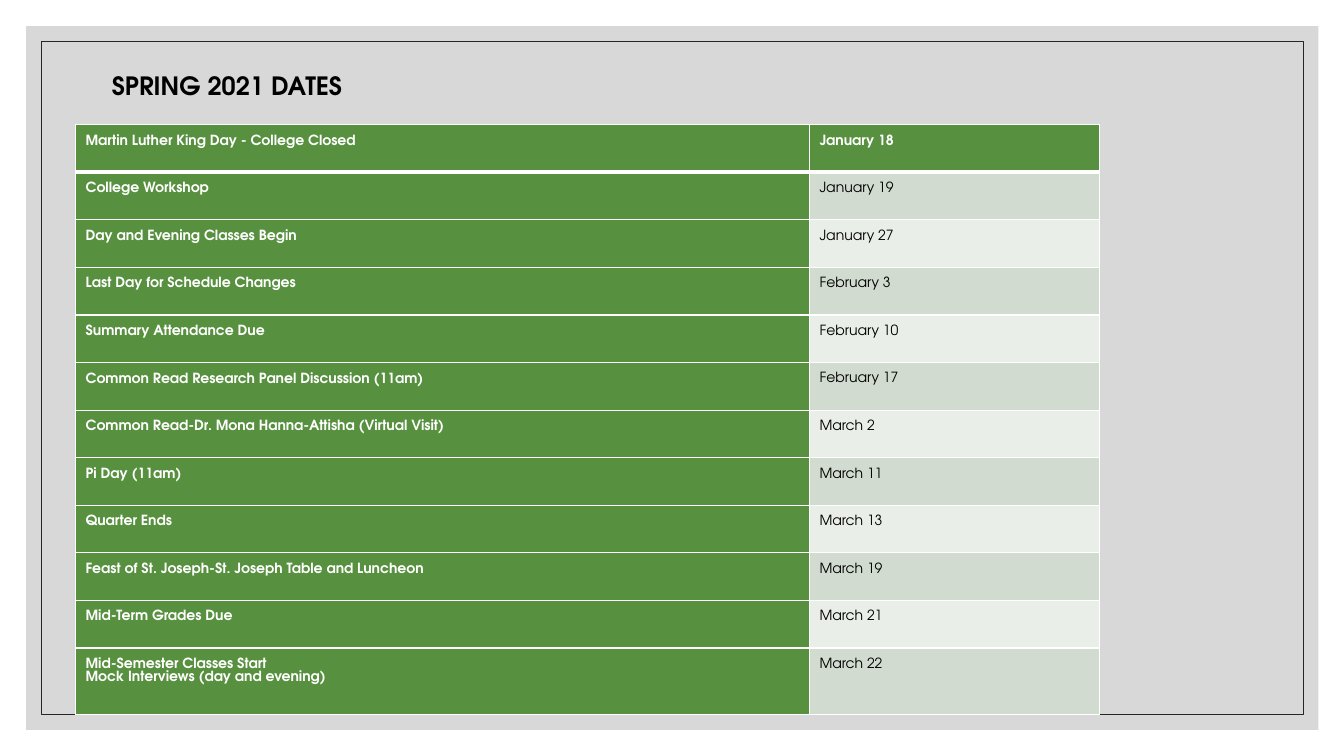
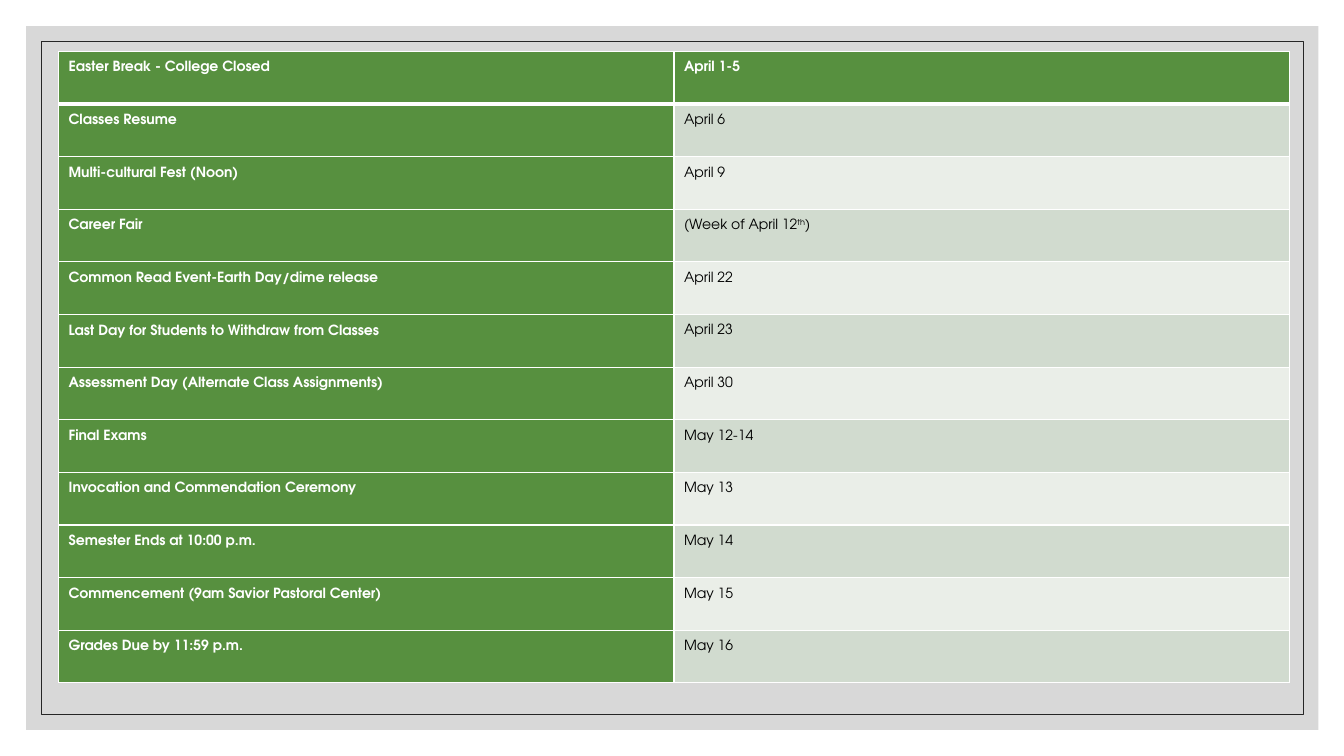
"""Build the two slides of spring semester dates."""
import pptx
import pptx.dml.color
import pptx.enum.shapes
import pptx.enum.text
import pptx.oxml.ns
import pptx.util
from lxml import etree

Pt = pptx.util.Pt
FONT = "TeX Gyre Adventor"
BLACK, WHITE, GREEN = "000000", "FFFFFF", "57903F"
PANEL, FRAME = "BFBFBF", "262626"
BANDS = ("D1DBCF", "EAEEE8")

EARLY_DATES = [
    ("Martin Luther King Day - College Closed", "January 18"),
    ("College Workshop", "January 19"),
    ("Day and Evening Classes Begin", "January 27"),
    ("Last Day for Schedule Changes", "February 3"),
    ("Summary Attendance Due", "February 10"),
    ("Common Read Research Panel Discussion (11am)", "February 17"),
    ("Common Read-Dr. Mona Hanna-Attisha (Virtual Visit)", "March 2"),
    ("Pi Day (11am)", "March 11"),
    ("Quarter Ends", "March 13"),
    ("Feast of St. Joseph-St. Joseph Table and Luncheon", "March 19"),
    ("Mid-Term Grades Due", "March 21"),
    ("Mid-Semester Classes Start\nMock Interviews (day and evening)", "March 22"),
]
LATE_DATES = [
    ("Easter Break - College Closed", "April 1-5"),
    ("Classes Resume", "April 6"),
    ("Multi-cultural Fest (Noon)", "April 9"),
    ("Career Fair", "(Week of April 12^th^)"),
    ("Common Read Event-Earth Day/dime release", "April 22"),
    ("Last Day for Students to Withdraw from Classes", "April 23"),
    ("Assessment Day (Alternate Class Assignments)", "April 30"),
    ("Final Exams", "May 12-14"),
    ("Invocation and Commendation Ceremony", "May 13"),
    ("Semester Ends at 10:00 p.m.", "May 14"),
    ("Commencement (9am Savior Pastoral Center)", "May 15"),
    ("Grades Due by 11:59 p.m.", "May 16"),
]


def paint(target, color):
    """Give a fill or a line fill a solid colour."""
    target.solid()
    target.fore_color.rgb = pptx.dml.color.RGBColor.from_string(color)


def add_child(parent, tag, **attributes):
    """Append a drawing element with the given attributes."""
    return etree.SubElement(parent, pptx.oxml.ns.qn(tag), attributes)


def write(frame, text, size=10, color=BLACK, bold=False, spacing=None):
    """Write lines of text, raising whatever stands between carets."""
    frame.word_wrap = True
    for index, line in enumerate(text.split("\n")):
        para = frame.add_paragraph() if index else frame.paragraphs[0]
        para.alignment = pptx.enum.text.PP_ALIGN.LEFT
        para.line_spacing = spacing
        for position, part in enumerate(line.split("^")):
            span = para.add_run()
            span.text = part
            span.font.name = FONT
            span.font.size = Pt(size)
            span.font.bold = bold
            paint(span.font.fill, color)
            if position % 2:
                span.font._element.set("baseline", "30000")


def add_rectangle(page, left, top, width, height):
    """Add a rectangle without fill, line or shadow."""
    box = page.shapes.add_shape(pptx.enum.shapes.MSO_SHAPE.RECTANGLE,
                                Pt(left), Pt(top), Pt(width), Pt(height))
    box.shadow.inherit = False
    box.fill.background()
    box.line.fill.background()
    return box


def add_backdrop(deck, page):
    """Draw the grey panel and thin frame and place them on the master."""
    panel = add_rectangle(page, 18.7, 18.7, 923, 502.6)
    paint(panel.fill, PANEL)
    tint = panel.fill._xPr.find(".//" + pptx.oxml.ns.qn("a:srgbClr"))
    add_child(tint, "a:alpha", val="60000")
    border = add_rectangle(page, 29.5, 29.5, 901.4, 481)
    paint(border.line.fill, FRAME)
    border.line.width = Pt(0.5)
    for number, box in enumerate((panel, border), 101):
        box._element.nvSpPr.cNvPr.set("id", str(number))
        deck.slide_master.shapes._spTree.append(box._element)


def add_title(page, text):
    """Place and write the page title."""
    title = page.shapes.title
    title.left, title.top, title.width, title.height = map(Pt, (72.7, 46.8, 216, 28.8))
    title.text_frame.auto_size = pptx.enum.text.MSO_AUTO_SIZE.NONE
    title.text_frame.vertical_anchor = pptx.enum.text.MSO_ANCHOR.MIDDLE
    write(title.text_frame, text, size=18, bold=True)


def set_borders(cell, **widths):
    """Draw white cell borders, one point wide unless stated."""
    properties = cell._tc.get_or_add_tcPr()
    for side in "LRTB":
        line = add_child(properties, "a:ln" + side, w=str(Pt(widths.get(side, 1))))
        add_child(add_child(line, "a:solidFill"), "a:srgbClr", val=WHITE)


def add_dates(page, dates, left, top, columns, heights):
    """Add a table of events and dates with a green header and first column."""
    table = page.shapes.add_table(len(dates), len(columns), Pt(left), Pt(top),
                                  Pt(sum(columns)), Pt(sum(heights))).table
    table.first_col = True
    for column, width in zip(table.columns, columns):
        column.width = Pt(width)
    for row, (entry, height) in enumerate(zip(dates, heights)):
        table.rows[row].height = Pt(height)
        for column, text in enumerate(entry):
            cell = table.cell(row, column)
            heading = row == 0 or column == 0
            cell.margin_left = cell.margin_right = Pt(7.2)
            cell.margin_top = cell.margin_bottom = Pt(7.2)
            set_borders(cell, T=3 if row == 1 else 1, B=1 if row else 3)
            paint(cell.fill, GREEN if heading else BANDS[(row - 1) % 2])
            write(cell.text_frame, text, color=WHITE if heading else BLACK,
                  bold=heading, spacing=Pt(9.3))


def main():
    """Build and save the deck."""
    deck = pptx.Presentation()
    deck.slide_width, deck.slide_height = Pt(960), Pt(540)
    title_only, blank = deck.slide_layouts[5], deck.slide_layouts[6]

    page = deck.slides.add_slide(title_only)
    add_backdrop(deck, page)
    add_title(page, "SPRING 2021 DATES")
    add_dates(page, EARLY_DATES, 54, 89, (524.2, 207.4), [34] * 11 + [47.5])

    page = deck.slides.add_slide(blank)
    add_dates(page, LATE_DATES, 41.8, 36.7, (439.6, 439.6), [37.6] * 12)
    deck.save("out.pptx")


if __name__ == "__main__":
    main()
